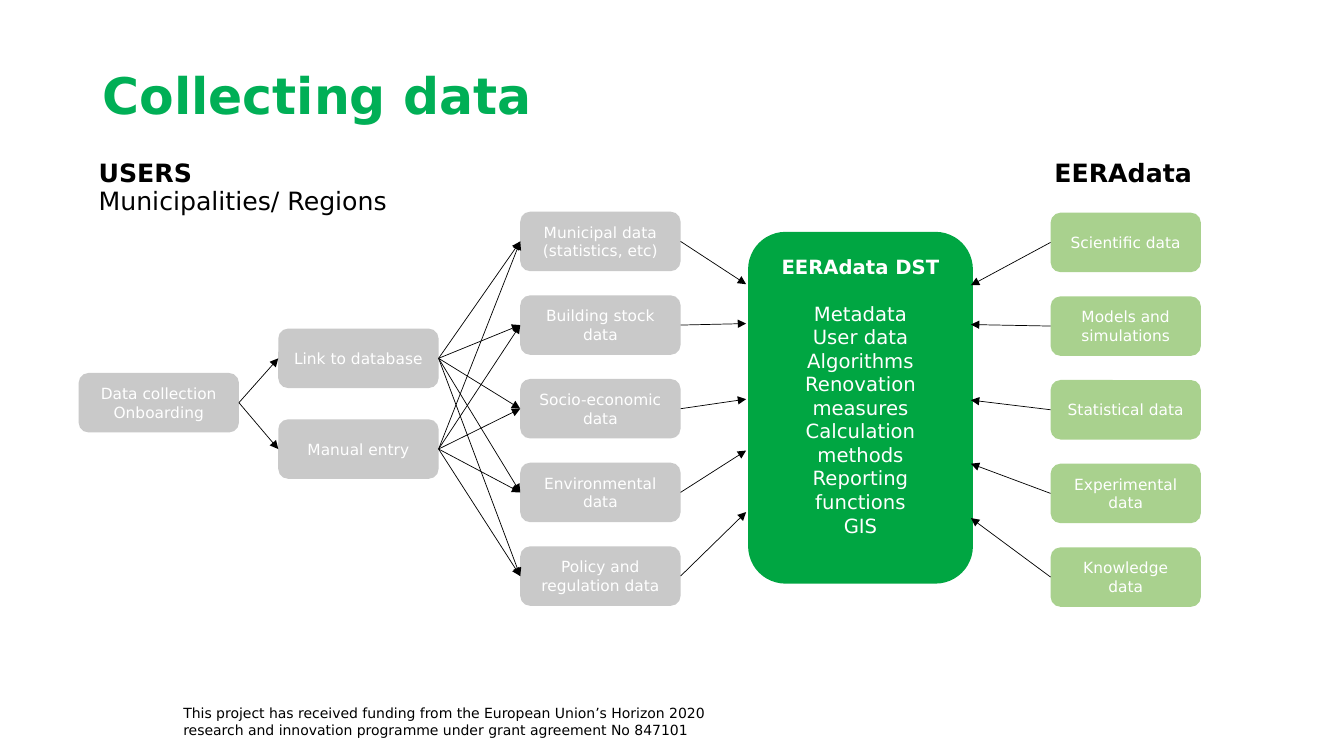
from dataclasses import dataclass

from lxml import etree
from pptx import Presentation
from pptx.dml.color import RGBColor
from pptx.enum import shapes, text
from pptx.oxml import ns
from pptx.util import Inches, Pt


@dataclass(frozen=True)
class Theme:
    """Colours, font and type sizes of the slide."""
    font: str = "DejaVu Sans"
    title: str = "00AF56"
    hub: str = "00A642"
    user: str = "C9C9C9"
    partner: str = "A9D18E"
    ink: str = "000000"
    paper: str = "FFFFFF"
    title_size: int = 36
    heading_size: int = 18
    hub_size: int = 14
    box_size: int = 11
    footer_size: int = 10
    line_width: float = 0.5


THEME = Theme()
BOX_HEIGHT = 0.59
USER_WIDTH = 1.59
ROW_PITCH = 0.83


def write(frame, lines, size, color, bold_lines=0, spacing=None, align=None):
    """Fill a text frame with one paragraph per line, the first ones bold."""
    frame.word_wrap = True
    frame.text = "\n".join(lines)
    for index, paragraph in enumerate(frame.paragraphs):
        paragraph.alignment = align
        paragraph.line_spacing = spacing
        for run in paragraph.runs:
            run.font.name = THEME.font
            run.font.size = Pt(size)
            run.font.bold = index < bold_lines
            run.font.color.rgb = RGBColor.from_string(color)


def add_label(slide, box, lines, size, color=THEME.ink, bold_lines=0, spacing=None):
    """Add a plain text box."""
    label = slide.shapes.add_textbox(*map(Inches, box))
    write(label.text_frame, lines, size, color, bold_lines, spacing)


def add_box(slide, box, lines, fill, size=THEME.box_size, bold_lines=0):
    """Add a filled rounded box with centred white text."""
    shape = slide.shapes.add_shape(
        shapes.MSO_SHAPE.ROUNDED_RECTANGLE, *map(Inches, box))
    shape.shadow.inherit = False
    shape.fill.solid()
    shape.fill.fore_color.rgb = RGBColor.from_string(fill)
    shape.line.fill.background()
    shape.text_frame.vertical_anchor = text.MSO_ANCHOR.MIDDLE
    write(shape.text_frame, lines, size, THEME.paper, bold_lines,
          align=text.PP_ALIGN.CENTER)
    return shape


def add_arrow(slide, source, side, target=None, point=(0, 0)):
    """Draw an arrow from a side of a box to another box's left side or to a point."""
    arrow = slide.shapes.add_connector(
        shapes.MSO_CONNECTOR.STRAIGHT, 0, 0, *point)
    arrow.begin_connect(source, side)
    if target is not None:
        arrow.end_connect(target, 1)
    arrow.line.color.rgb = RGBColor.from_string(THEME.ink)
    arrow.line.width = Pt(THEME.line_width)
    etree.SubElement(arrow.line._get_or_add_ln(), ns.qn("a:tailEnd"), type="triangle")
    etree.SubElement(arrow._element.spPr, ns.qn("a:effectLst"))


def add_column(slide, left, top, width, labels, fill, pitch=ROW_PITCH):
    """Stack boxes at an even pitch and return them."""
    return [add_box(slide, (left, top + row * pitch, width, BOX_HEIGHT), [label], fill)
            for row, label in enumerate(labels)]


def add_user_flow(slide, left, top):
    """Add the onboarding, entry and data boxes with their arrows."""
    onboarding, = add_column(slide, left, top + 1.6, USER_WIDTH,
                             ["Data collection Onboarding"], THEME.user)
    entries = add_column(slide, left + 1.98, top + 1.16, USER_WIDTH,
                         ["Link to database", "Manual entry"], THEME.user, 0.9)
    data = add_column(slide, left + 4.38, top, USER_WIDTH,
                      ["Municipal data (statistics, etc)", "Building stock data",
                       "Socio-economic data", "Environmental data",
                       "Policy and regulation data"], THEME.user)
    for entry in entries:
        add_arrow(slide, onboarding, 3, entry)
        for item in data:
            add_arrow(slide, entry, 3, item)
    return data


def add_partner_data(slide, left, top):
    """Add the column of partner data boxes."""
    return add_column(slide, left, top, 1.49,
                      ["Scientific data", "Models and simulations", "Statistical data",
                       "Experimental data", "Knowledge data"], THEME.partner)


def add_hub(slide, box, user_data, partner_data):
    """Add the central tool and the arrows that feed it from both sides."""
    left, top, width, _ = box
    hub = add_box(slide, box,
                  ["EERAdata DST", "Metadata", "User data", "Algorithms",
                   "Renovation measures", "Calculation methods",
                   "Reporting functions", "GIS"],
                  THEME.hub, THEME.hub_size, bold_lines=1)
    hub.text_frame.margin_bottom = Inches(0.28)
    hub.text_frame.paragraphs[1].space_before = Pt(16.3)
    feeds = [(user_data, 3, left - 0.02, (0.52, 0.91, 1.66, 2.17, 2.78)),
             (partner_data, 1, left + width - 0.02, (0.53, 0.92, 1.67, 2.3, 2.84))]
    for sources, side, edge, drops in feeds:
        for source, drop in zip(sources, drops):
            add_arrow(slide, source, side, point=(Inches(edge), Inches(top + drop)))


def add_headings(slide, left, top):
    """Add the title and the headings above the two groups of data."""
    add_label(slide, (left + 0.04, top, 11.5, 0.85), ["Collecting data"],
              THEME.title_size, THEME.title, 1, 0.9)
    add_label(slide, (left, top + 0.9, 4, 0.65), ["USERS", "Municipalities/ Regions"],
              THEME.heading_size, bold_lines=1, spacing=0.9)
    add_label(slide, (left + 9.48, top + 0.9, 2, 0.4), ["EERAdata"],
              THEME.heading_size, bold_lines=1, spacing=0.9)


def add_footer(slide, box):
    """Add the funding statement."""
    add_label(slide, box,
              ["This project has received funding from the European Union’s Horizon 2020",
               "research and innovation programme under grant agreement No 847101"],
              THEME.footer_size)


def main():
    """Build and save the slide."""
    presentation = Presentation()
    presentation.slide_width = Inches(13.33)
    presentation.slide_height = Inches(7.5)
    slide = presentation.slides.add_slide(presentation.slide_layouts[6])
    add_footer(slide, (1.72, 6.94, 5.57, 0.44))
    add_headings(slide, 0.88, 0.65)
    user_data = add_user_flow(slide, 0.78, 2.1)
    partner_data = add_partner_data(slide, 10.42, 2.11)
    add_hub(slide, (7.42, 2.3, 2.23, 3.49), user_data, partner_data)
    presentation.save("out.pptx")


if __name__ == "__main__":
    main()
